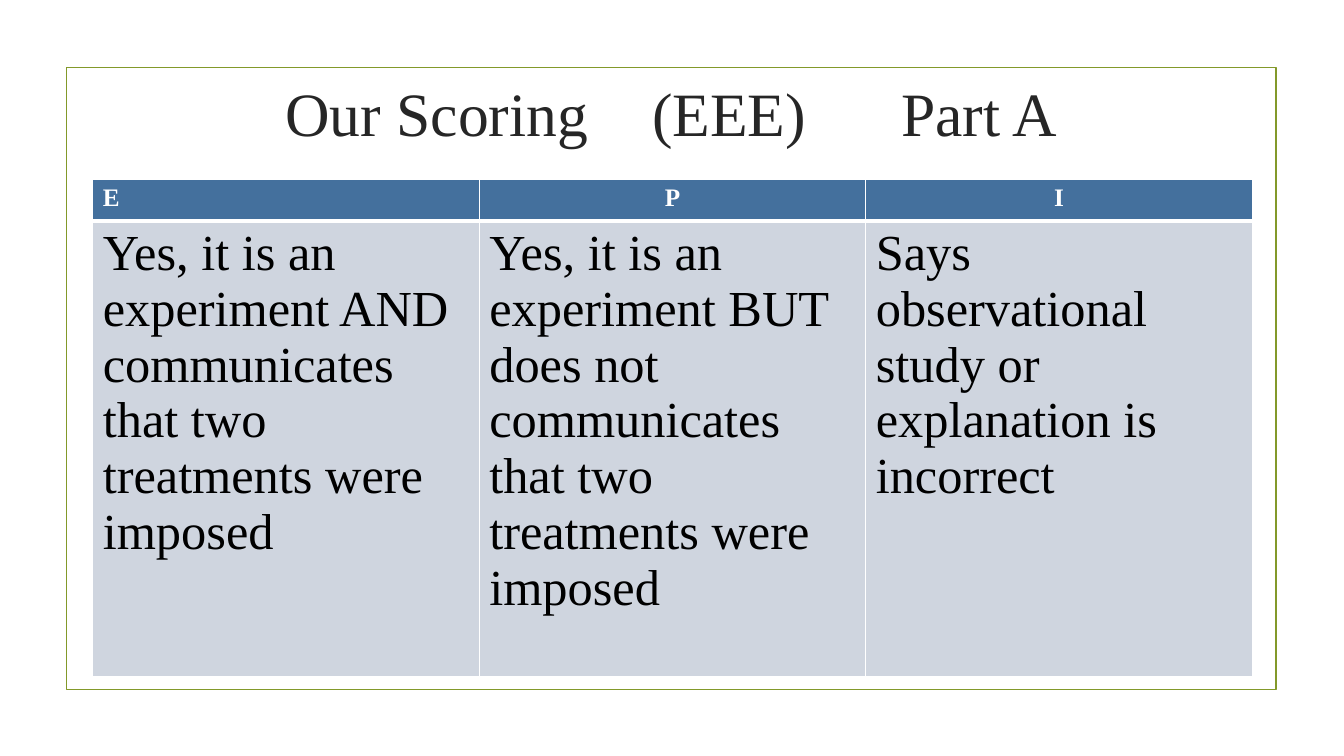
from lxml import etree
from pptx import Presentation
from pptx.dml.color import RGBColor
from pptx.enum.shapes import MSO_SHAPE
from pptx.enum.text import MSO_ANCHOR, PP_ALIGN
from pptx.oxml.ns import qn
from pptx.util import Inches, Pt

RECT = MSO_SHAPE.RECTANGLE
MIDDLE = MSO_ANCHOR.MIDDLE
LEFT, CENTER = PP_ALIGN.LEFT, PP_ALIGN.CENTER

FONT = "Times New Roman"
WHITE, BLACK = "FFFFFF", "000000"
OLIVE, CHARCOAL = "83992A", "262626"
HEADER_BLUE, BODY_GREY = "44709D", "CFD5DF"

COL_WIDTH = 11.5 / 3
HEADER_ROW, BODY_ROW = 0.41, 4.52
SCORES = [
    ("E", LEFT, "Yes, it is an experiment AND communicates that two treatments were imposed"),
    ("P", CENTER, "Yes, it is an experiment BUT does not communicates that two treatments were imposed"),
    ("I", CENTER, "Says observational study or explanation is incorrect"),
]


def rgb(value):
    return RGBColor.from_string(value)


def add_run(p, text, size, color, bold=False):
    r = p.add_run()
    r.text = text
    r.font.name = FONT
    r.font.size = Pt(size)
    r.font.bold = bold
    r.font.color.rgb = rgb(color)


def add_frame(s, left, top, width, height):
    sp = s.shapes.add_shape(RECT, Inches(left), Inches(top), Inches(width), Inches(height))
    sp.shadow.inherit = False
    sp.fill.background()
    sp.line.color.rgb = rgb(OLIVE)
    sp.line.width = Pt(1.25)


def add_tab_stops(p, stops):
    tabs = etree.SubElement(p._p.get_or_add_pPr(), qn("a:tabLst"))
    for stop in stops:
        etree.SubElement(tabs, qn("a:tab"), pos=str(Inches(stop)), algn="l")


def add_title(s, parts, stops):
    """Place the title parts on one line, each later part at its own tab stop."""
    sp = s.shapes.add_textbox(Inches(1.42), Inches(0.39), Inches(10.5), Inches(1.43))
    tf = sp.text_frame
    tf.word_wrap = True
    tf.vertical_anchor = MIDDLE
    tf.margin_left = Inches(1.41)
    p = tf.paragraphs[0]
    add_tab_stops(p, stops)
    add_run(p, "\t".join(parts), 44, CHARCOAL)


def set_borders(cell, bottom, top):
    tc_pr = cell._tc.get_or_add_tcPr()
    for side, width in (("L", 1), ("R", 1), ("T", top), ("B", bottom)):
        ln = etree.SubElement(tc_pr, qn(f"a:ln{side}"), w=str(Pt(width)))
        fill = etree.SubElement(ln, qn("a:solidFill"))
        etree.SubElement(fill, qn("a:srgbClr"), val=WHITE)


def fill_cell(cell, text, size, color, fill, align=LEFT, bold=False, top=1, bottom=1):
    set_borders(cell, bottom, top)
    cell.fill.solid()
    cell.fill.fore_color.rgb = rgb(fill)
    p = cell.text_frame.paragraphs[0]
    p.alignment = align
    add_run(p, text, size, color, bold)


def add_score_table(s, left, top):
    table = s.shapes.add_table(
        2, len(SCORES), Inches(left), Inches(top),
        Inches(COL_WIDTH * len(SCORES)), Inches(HEADER_ROW + BODY_ROW)).table
    for row, height in zip(table.rows, (HEADER_ROW, BODY_ROW)):
        row.height = Inches(height)
    for i, (grade, align, meaning) in enumerate(SCORES):
        table.columns[i].width = Inches(COL_WIDTH)
        fill_cell(table.cell(0, i), grade, 18, WHITE, HEADER_BLUE, align, bold=True, bottom=3)
        fill_cell(table.cell(1, i), meaning, 36, BLACK, BODY_GREY, top=3)


def main():
    prs = Presentation()
    prs.slide_width, prs.slide_height = Inches(13.33), Inches(7.5)
    s = prs.slides.add_slide(prs.slide_layouts[6])
    add_frame(s, 0.66, 0.67, 12, 6.17)
    add_title(s, ["Our Scoring", "(EEE)", "Part A"], [3.64, 6.11])
    add_score_table(s, 0.92, 1.78)
    prs.save("out.pptx")


if __name__ == "__main__":
    main()
